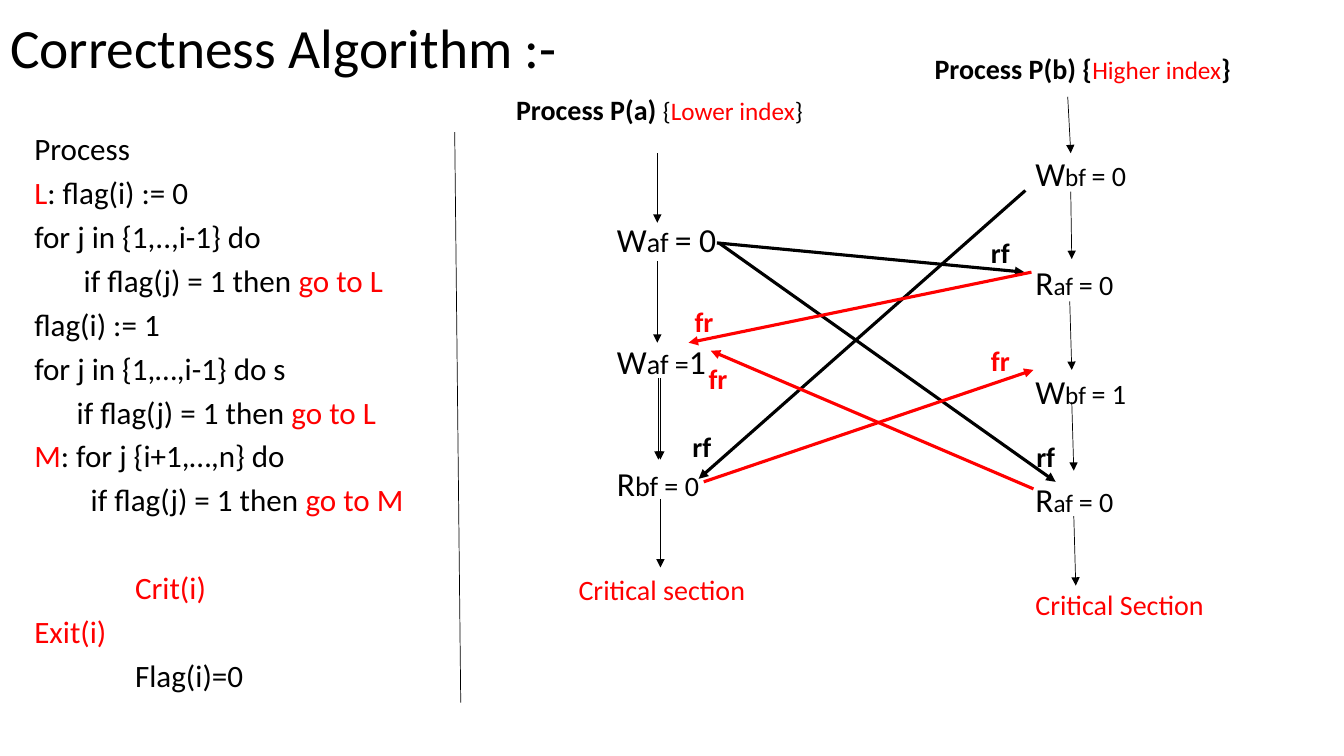
from pptx import Presentation
from pptx.dml.color import RGBColor
from pptx.enum.shapes import MSO_CONNECTOR
from pptx.enum.text import MSO_ANCHOR, MSO_AUTO_SIZE, PP_ALIGN
from pptx.oxml.ns import qn
from pptx.util import Inches, Pt
from lxml import etree

STRAIGHT = MSO_CONNECTOR.STRAIGHT
TOP, MIDDLE = MSO_ANCHOR.TOP, MSO_ANCHOR.MIDDLE
NO_AUTOFIT = MSO_AUTO_SIZE.NONE
LEFT = PP_ALIGN.LEFT
BLACK = RGBColor(0, 0, 0)
RED = RGBColor(255, 0, 0)
FONT = "Calibri"
CODE_SIZE = 22.2

CODE = [
    (0, 10, [("Process", BLACK)]),
    (0, 10, [("L", RED), (": flag(i) := 0", BLACK)]),
    (0, 10, [("for j in {1,..,i-1} do", BLACK)]),
    (0.49, 10, [("if flag(j) = 1 then ", BLACK), ("go to L", RED)]),
    (0, 10, [("flag(i) := 1", BLACK)]),
    (0, 10, [("for j in {1,…,i-1} do s", BLACK)]),
    (0.42, 10, [("if flag(j) = 1 then ", BLACK), ("go to L", RED)]),
    (0, 10, [("M", RED), (": for j {i+1,…,n} do", BLACK)]),
    (0.56, 10, [("if flag(j) = 1 then ", BLACK), ("go to M", RED)]),
    (1, 41.5, [("Crit(i)", RED)]),
    (0, 10, [("Exit(i)", RED)]),
    (1, 10, [("Flag(i)=0", BLACK)]),
]

PROCESS_A = [
    (0, 0, [("Process P(a) ", 20, BLACK, True), ("{", 18, BLACK),
            ("Lower index", 18, RED), ("}", 18, BLACK)]),
    (1, 66, [("W", 24, BLACK), ("af ", 20, BLACK), ("= 0", 24, BLACK)]),
    (1, 58.6, [("W", 24, BLACK), ("af =", 20, BLACK), ("1", 24, BLACK)]),
    (1, 58.6, [("R", 24, BLACK), ("bf = 0", 20, BLACK)]),
    (0.62, 48.8, [("Critical section", 20, RED)]),
]

STATES_B = [("W", "bf ", "= 0"), ("R", "af ", "= 0"),
            ("W", "bf ", "= 1"), ("R", "af ", "= 0")]
PROCESS_B = [
    (0, 0, [("Process P(b) {", 20, BLACK, True), ("Higher index", 18, RED),
            ("}", 20, BLACK, True)]),
    *[(1, 48.8, [(op, 24, BLACK), (flag, 18, BLACK), (value, 20, BLACK)])
      for op, flag, value in STATES_B],
    (1, 48.8, [("Critical Section", 20, RED)]),
]

STEPS = [
    (6.52, 1.52, 6.52, 2.21), (6.52, 2.59, 6.52, 3.4),
    (6.55, 3.75, 6.55, 4.56), (6.53, 3.75, 6.53, 4.56),
    (6.55, 4.95, 6.55, 5.63),
    (10.59, 0.96, 10.62, 1.52), (10.62, 1.9, 10.63, 2.57),
    (10.61, 2.99, 10.63, 3.67), (10.63, 3.99, 10.65, 4.67),
    (10.65, 5.12, 10.67, 5.81),
]
READS_FROM = [(7.11, 2.41, 10.16, 2.7), (7.13, 2.41, 10.47, 4.78),
              (10.17, 1.89, 6.93, 4.75)]
FROM_READS = [(10.23, 2.7, 6.83, 3.4), (10.25, 4.85, 7.05, 3.48),
              (6.98, 4.78, 10.25, 3.67)]
RF_LABELS = [(9.73, 2.29), (10.18, 4.31), (6.77, 4.21)]
FR_LABELS = [(9.73, 3.36), (6.79, 2.97), (6.93, 3.54)]


def place(sp, left, top, width, height):
    sp.left, sp.top = Inches(left), Inches(top)
    sp.width, sp.height = Inches(width), Inches(height)


def add_run(p, text, size, color, bold=False):
    r = p.add_run()
    r.text = text
    r.font.name = FONT
    r.font.size = Pt(size)
    r.font.bold = bold
    r.font.color.rgb = color


def add_lines(tf, lines):
    for i, (indent, before, runs) in enumerate(lines):
        p = tf.add_paragraph() if i else tf.paragraphs[0]
        p.alignment = LEFT
        p.space_before = Pt(before)
        pPr = p._p.get_or_add_pPr()
        pPr.set("marL", str(Inches(indent)))
        pPr.set("indent", "0")
        for run in runs:
            add_run(p, *run)


def add_title(s):
    sp = s.shapes.title
    place(sp, 0, 0.13, 5.67, 0.74)
    tf = sp.text_frame
    tf.auto_size = NO_AUTOFIT
    tf.vertical_anchor = MIDDLE
    p = tf.paragraphs[0]
    p.alignment = LEFT
    p.line_spacing = 0.9
    add_run(p, "Correctness Algorithm :-", 39.6, BLACK)


def add_code(s):
    sp = s.placeholders[1]
    place(sp, 0.24, 1.31, 4.3, 5.83)
    tf = sp.text_frame
    tf.auto_size = NO_AUTOFIT
    tf.vertical_anchor = TOP
    add_lines(tf, [(indent, before, [(text, CODE_SIZE, color) for text, color in runs])
                   for indent, before, runs in CODE])
    for p in tf.paragraphs:
        p.line_spacing = 0.8
        etree.SubElement(p._p.get_or_add_pPr(), qn("a:buNone"))


def add_text(s, box, lines, wrap=True):
    sp = s.shapes.add_textbox(*[Inches(v) for v in box])
    sp.text_frame.word_wrap = wrap
    add_lines(sp.text_frame, lines)


def add_line(s, ends, color, width, arrow=True):
    line = s.shapes.add_connector(STRAIGHT, *[Inches(v) for v in ends])
    line.line.color.rgb = color
    line.line.width = Pt(width)
    if arrow:
        etree.SubElement(line.line._get_or_add_ln(), qn("a:tailEnd"), type="triangle")
    etree.SubElement(line._element.spPr, qn("a:effectLst"))


def main():
    prs = Presentation()
    prs.slide_width, prs.slide_height = Inches(13.33), Inches(7.5)
    s = prs.slides.add_slide(prs.slide_layouts[1])
    add_title(s)
    add_code(s)
    add_line(s, (4.51, 1.31, 4.57, 6.97), BLACK, 0.5, arrow=False)
    add_text(s, (5.02, 0.87, 3.37, 5.18), PROCESS_A)
    add_text(s, (9.17, 0.46, 3.92, 5.8), PROCESS_B)
    for arrows, color, width in ((STEPS, BLACK, 0.5), (READS_FROM, BLACK, 2.25),
                                 (FROM_READS, RED, 2.25)):
        for ends in arrows:
            add_line(s, ends, color, width)
    for text, color, spots in (("rf", BLACK, RF_LABELS), ("fr", RED, FR_LABELS)):
        for left, top in spots:
            add_text(s, (left, top, 0.43, 0.44),
                     [(0, 0, [(text, 20, color, True)])], wrap=False)
    prs.save("out.pptx")


if __name__ == "__main__":
    main()
